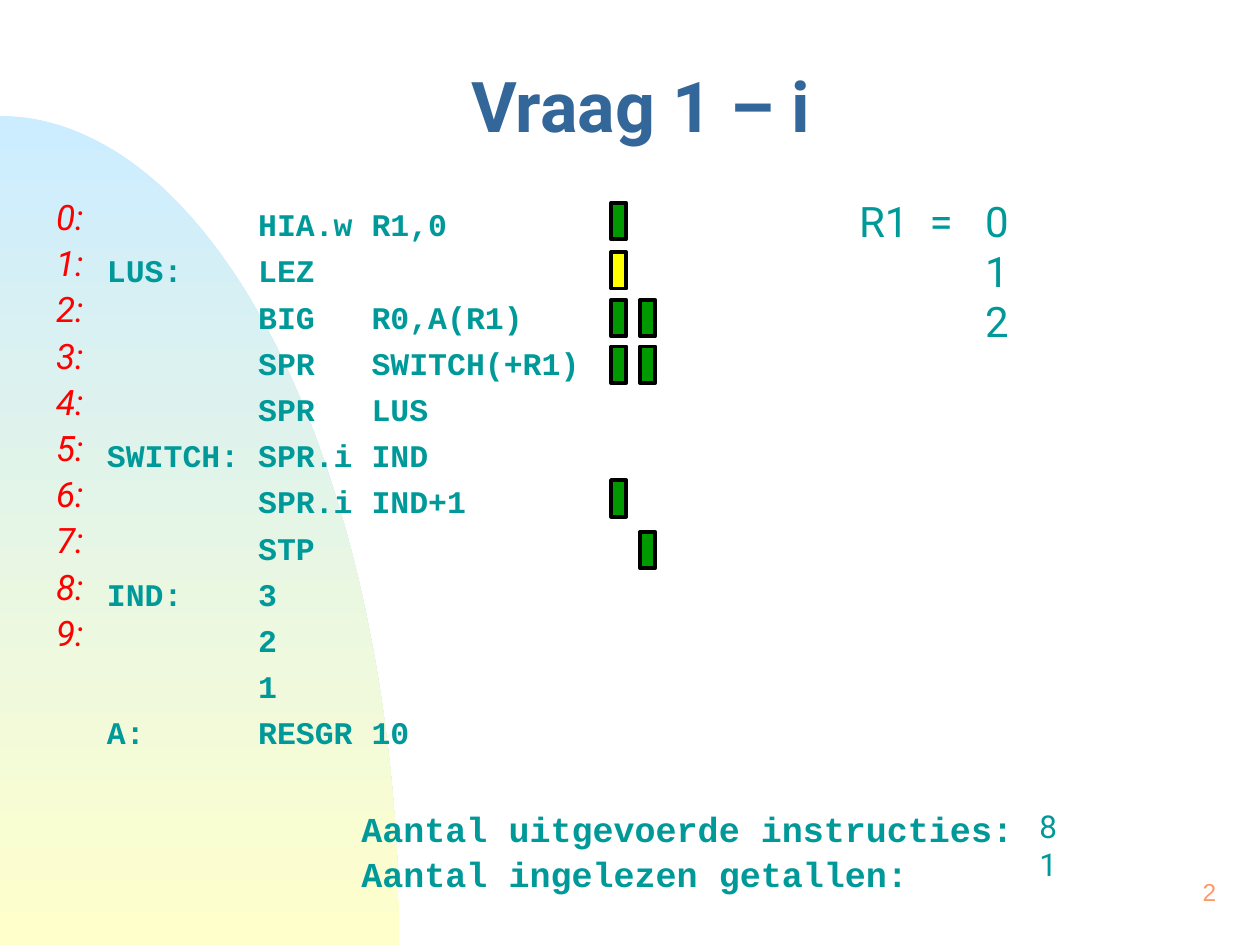
import math

import pptx
import pptx.dml.color
import pptx.enum.shapes
import pptx.enum.text
import pptx.oxml
import pptx.oxml.ns
import pptx.util

Inches, Pt = pptx.util.Inches, pptx.util.Pt
ALIGN = pptx.enum.text.PP_ALIGN
ANCHOR = pptx.enum.text.MSO_ANCHOR

COLORS = {
    "sky": "CCECFF", "sand": "FFFFCC", "title": "336699", "text": "009999",
    "address": "FF0000", "done": "009900", "current": "FFFF00",
    "outline": "010000", "page": "FF9966",
}

# Content
TITLE = "Vraag 1 – i"
PROGRAM = [  # label, operation, operand
    ("", "HIA.w", "R1,0"),
    ("LUS:", "LEZ", ""),
    ("", "BIG", "R0,A(R1)"),
    ("", "SPR", "SWITCH(+R1)"),
    ("", "SPR", "LUS"),
    ("SWITCH:", "SPR.i", "IND"),
    ("", "SPR.i", "IND+1"),
    ("", "STP", ""),
    ("IND:", "3", ""),
    ("", "2", ""),
    ("", "1", ""),
    ("A:", "RESGR", "10"),
]
ADDRESSES = [f"{n}:" for n in range(10)]
REGISTER = ["R1\t=\t0", "\t\t1", "\t\t2"]
TOTALS = ["Aantal uitgevoerde instructies:\vAantal ingelezen getallen:"]
TOTAL_VALUES = ["8", "1"]
PAGE = ["2"]

# Execution marks: top of each instruction row, then colour per pass
MARK_ROWS = [
    (1.61, ["done"]),
    (2.00, ["current"]),
    (2.38, ["done", "done"]),
    (2.75, ["done", "done"]),
    (3.81, ["done"]),
    (4.22, [None, "done"]),
]
MARK_LEFT, MARK_STEP, MARK_WIDTH, MARK_HEIGHT = 4.85, 0.23, 0.12, 0.29
CODE_CHAR = 0.15  # width of one 18 pt Courier New character
ARC_WIDTH, ARC_HEIGHT, ARC_STEPS = 3.17, 6.58, 90


def rgb(name):
    return pptx.dml.color.RGBColor.from_string(COLORS[name])


def style(paragraph, size, color, font="Roboto", bold=False, italic=False):
    paragraph.font.size = Pt(size)
    paragraph.font.name = font
    paragraph.font.bold = bold
    paragraph.font.italic = italic
    paragraph.font.color.rgb = rgb(color)


def set_tabs(paragraph, stops):
    """Insert left tab stops, which must precede the default run properties."""
    properties = paragraph._p.get_or_add_pPr()
    tabs = pptx.oxml.parse_xml(f"<a:tabLst {pptx.oxml.ns.nsdecls('a')}/>")
    for stop in stops:
        tab = tabs.makeelement(pptx.oxml.ns.qn("a:tab"), {"pos": str(Inches(stop)), "algn": "l"})
        tabs.append(tab)
    properties.find(pptx.oxml.ns.qn("a:defRPr")).addprevious(tabs)


def add_text(slide, box, lines, size, color, align=ALIGN.LEFT, wrap=True, spacing=None,
             before=None, tabs=(), anchor=ANCHOR.TOP, **font):
    frame = slide.shapes.add_textbox(*map(Inches, box)).text_frame
    frame.word_wrap = wrap
    frame.vertical_anchor = anchor
    frame.margin_right = 0 if tabs else Inches(0.1)
    for number, line in enumerate(lines):
        paragraph = frame.add_paragraph() if number else frame.paragraphs[0]
        paragraph.text = line
        paragraph.alignment = align
        paragraph.line_spacing = spacing
        paragraph.space_before = before
        style(paragraph, size, color, **font)
        if tabs:
            set_tabs(paragraph, tabs)


def add_arc(slide, slide_height):
    angles = [math.pi / 2 * step / ARC_STEPS for step in range(ARC_STEPS + 1)]
    points = [(Inches(ARC_WIDTH * math.sin(a)),
               Inches(slide_height - ARC_HEIGHT * math.cos(a))) for a in angles]
    builder = slide.shapes.build_freeform(*points[0])
    builder.add_line_segments(points[1:] + [(0, Inches(slide_height))], close=True)
    arc = builder.convert_to_shape()
    arc.shadow.inherit = False
    arc.line.fill.background()
    arc.fill.gradient()
    arc.fill.gradient_angle = 270
    for stop, name in zip(arc.fill.gradient_stops, ("sky", "sand")):
        stop.color.rgb = rgb(name)


def add_mark(slide, left, top, color):
    mark = slide.shapes.add_shape(
        pptx.enum.shapes.MSO_SHAPE.RECTANGLE,
        *map(Inches, (left, top, MARK_WIDTH, MARK_HEIGHT)))
    mark.shadow.inherit = False
    mark.fill.solid()
    mark.fill.fore_color.rgb = rgb(color)
    mark.line.color.rgb = rgb("outline")
    mark.line.width = Pt(2.25)


def main():
    deck = pptx.Presentation()
    deck.slide_width, deck.slide_height = Inches(10), Inches(7.5)
    slide = deck.slides.add_slide(deck.slide_layouts.get_by_name("Title Only"))

    # Background arc
    add_arc(slide, 7.5)

    # Title
    title = slide.shapes.title
    title.left, title.top, title.width, title.height = map(Inches, (0.75, 0.58, 8.67, 0.67))
    title.text_frame.text = TITLE
    title.text_frame.vertical_anchor = ANCHOR.MIDDLE
    heading = title.text_frame.paragraphs[0]
    heading.alignment = ALIGN.CENTER
    heading.line_spacing = 0.7
    style(heading, 40, "title", bold=True)

    # Program listing with its addresses
    code = ["\t".join(parts).rstrip() for parts in PROGRAM]
    add_text(slide, (0.75, 1.58, 4.42, 5.08), code, 18, "text", before=Pt(4.8),
             tabs=(8 * CODE_CHAR, 14 * CODE_CHAR), font="Courier New", bold=True)
    add_text(slide, (0.34, 1.47, 0.43, 3.76), ADDRESSES, 20, "address",
             align=ALIGN.CENTER, wrap=False, spacing=1.1, italic=True)

    # Execution marks
    for top, passes in MARK_ROWS:
        for column, color in enumerate(passes):
            if color:
                add_mark(slide, MARK_LEFT + column * MARK_STEP, top, color)

    # Register values, totals and page number
    add_text(slide, (6.72, 1.5, 1.39, 1.3), REGISTER, 24, "text", tabs=(0.56, 1))
    add_text(slide, (2.77, 6.34, 6.2, 0.77), TOTALS, 20, "text", spacing=1.06,
             font="Courier New", bold=True)
    add_text(slide, (8.15, 6.36, 0.34, 0.7), TOTAL_VALUES, 18, "text",
             align=ALIGN.CENTER, wrap=False)
    add_text(slide, (7.67, 6.83, 2.08, 0.5), PAGE, 14, "page", align=ALIGN.RIGHT,
             anchor=ANCHOR.MIDDLE, font="Arial")

    deck.save("out.pptx")


if __name__ == "__main__":
    main()
